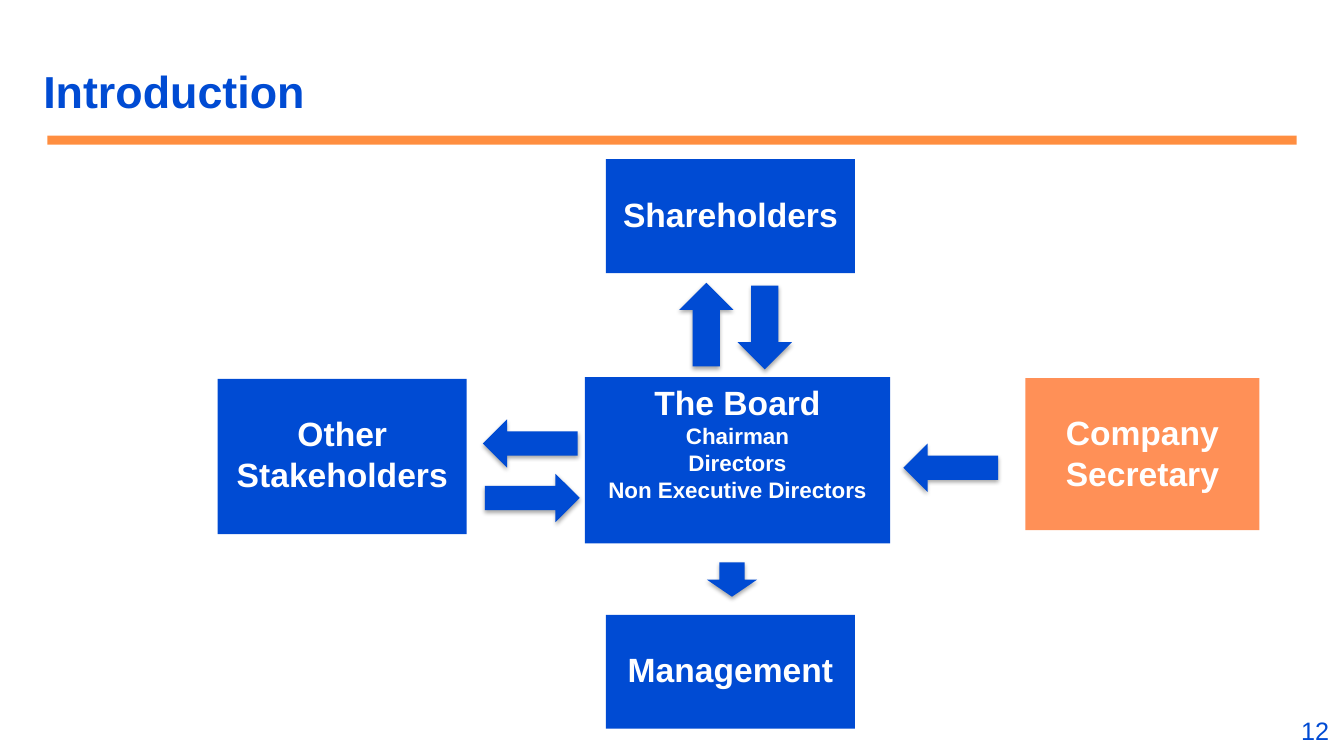
import pptx
import pptx.util
import pptx.oxml
import pptx.oxml.ns
import pptx.dml.color
import pptx.enum.shapes
import pptx.enum.text

Inches = pptx.util.Inches
Pt = pptx.util.Pt
RGBColor = pptx.dml.color.RGBColor
Shape = pptx.enum.shapes.MSO_SHAPE
Align = pptx.enum.text.PP_ALIGN
Anchor = pptx.enum.text.MSO_ANCHOR

BLUE = RGBColor(0x00, 0x4B, 0xD3)
ORANGE = RGBColor(0xFF, 0x69, 0x00)
PEACH = RGBColor(0xFF, 0x90, 0x57)
WHITE = RGBColor(0xFF, 0xFF, 0xFF)

NS = pptx.oxml.ns.nsdecls("a")
SHADOW = (
    f'<a:effectLst {NS}><a:outerShdw blurRad="40000" dist="23000" '
    'dir="5400000" rotWithShape="0"><a:srgbClr val="000000">'
    '<a:alpha val="35000"/></a:srgbClr></a:outerShdw></a:effectLst>'
)


def write(frame, lines, color, align, bold=True):
    """Fill a frame with (text, size) lines."""
    frame.word_wrap = True
    for i, (text, size) in enumerate(lines):
        para = frame.add_paragraph() if i else frame.paragraphs[0]
        para.text = text
        para.alignment = align
        para.font.name = "Arial"
        para.font.size = Pt(size)
        para.font.bold = bold
        para.font.color.rgb = color


def add_solid(slide, kind, place, fill):
    shape = slide.shapes.add_shape(kind, *map(Inches, place))
    shape.shadow.inherit = False
    shape.fill.solid()
    shape.fill.fore_color.rgb = fill
    shape.line.fill.background()
    return shape


def add_box(slide, place, lines, fill=BLUE, top=0.34):
    frame = add_solid(slide, Shape.RECTANGLE, place, fill).text_frame
    frame.vertical_anchor = Anchor.TOP
    frame.margin_top = Inches(top)
    write(frame, lines, WHITE, Align.CENTER)


def add_arrow(slide, place, turn):
    arrow = add_solid(slide, Shape.RIGHT_ARROW, place, BLUE)
    arrow.rotation = turn
    props = arrow._element.spPr
    props.remove(props.find(pptx.oxml.ns.qn("a:effectLst")))
    props.append(pptx.oxml.parse_xml(SHADOW))


def add_rule(slide, left, right, y):
    rule = slide.shapes.add_connector(
        pptx.enum.shapes.MSO_CONNECTOR.STRAIGHT,
        Inches(left), Inches(y), Inches(right), Inches(y))
    rule.line.width = Pt(6.5)
    rule.line.color.rgb = ORANGE
    props = rule._element.spPr
    tint = props.find(".//" + pptx.oxml.ns.qn("a:srgbClr"))
    tint.append(pptx.oxml.parse_xml(f'<a:alpha {NS} val="75000"/>'))
    props.append(pptx.oxml.parse_xml(f"<a:effectLst {NS}/>"))


def add_title(slide, text):
    frame = slide.shapes.add_textbox(
        Inches(0.43), Inches(-0.08), Inches(9), Inches(1.25)).text_frame
    frame.margin_left = frame.margin_right = 0
    frame.margin_top = frame.margin_bottom = 0
    frame.vertical_anchor = Anchor.BOTTOM
    write(frame, [(text, 32)], BLUE, Align.LEFT)
    frame.paragraphs[0].line_spacing = 0.9


def add_number(slide, text):
    frame = slide.shapes.add_textbox(
        Inches(12.62), Inches(7.05), Inches(0.66), Inches(0.4)).text_frame
    write(frame, [(text, 18)], BLUE, Align.RIGHT, bold=False)


def main():
    deck = pptx.Presentation()
    deck.slide_width = Inches(13.33)
    deck.slide_height = Inches(7.5)
    slide = deck.slides.add_slide(deck.slide_layouts[6])

    # Heading, rule and page number
    add_rule(slide, 0.47, 12.86, 1.39)
    add_number(slide, "12")
    add_title(slide, "Introduction")

    # The board in the centre
    board = [("The Board", 24), ("Chairman", 16), ("Directors", 16),
             ("Non Executive Directors", 16)]
    add_box(slide, (5.8, 3.74, 3.03, 1.65), board, top=0.05)

    # Parties around the board
    add_box(slide, (6.01, 1.58, 2.47, 1.13), [("Shareholders", 24)])
    add_box(slide, (2.16, 3.76, 2.47, 1.54),
            [("Other", 24), ("Stakeholders", 24)])
    add_box(slide, (6.01, 6.1, 2.47, 1.13), [("Management", 24)])
    add_box(slide, (10.17, 3.75, 2.32, 1.51),
            [("Company Secretary", 24)], PEACH)

    # Arrows: left, top, width, height, then clockwise turn
    for *place, turn in (
        (8.96, 4.4, 0.94, 0.48, 180),
        (6.59, 2.95, 0.83, 0.54, 270),
        (4.81, 4.7, 0.94, 0.48, 0),
        (4.79, 4.16, 0.94, 0.48, 180),
        (7.17, 2.98, 0.83, 0.54, 90),
        (7.09, 5.5, 0.34, 0.5, 90),
    ):
        add_arrow(slide, place, turn)

    deck.save("out.pptx")


if __name__ == "__main__":
    main()
